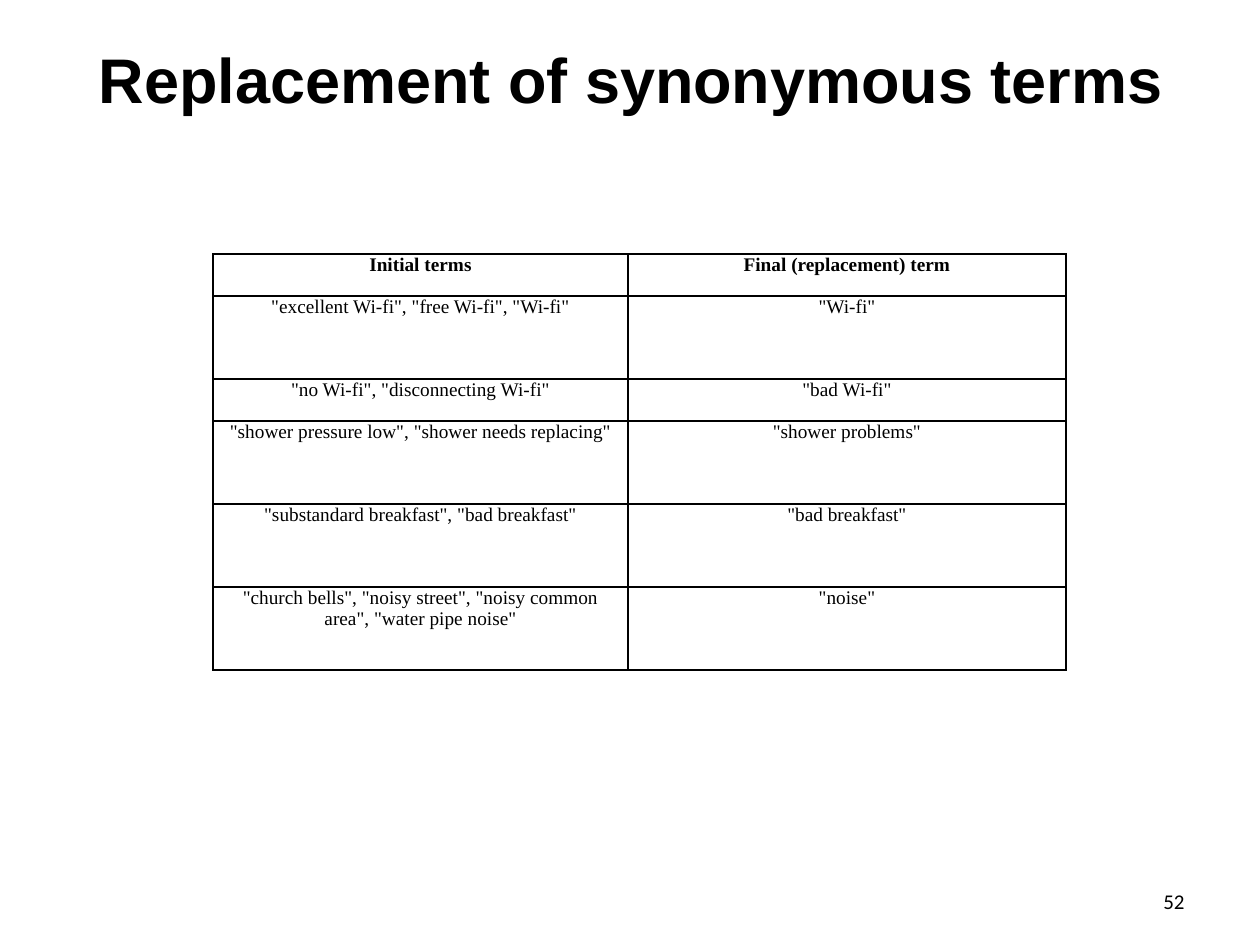
"""Build the slide on replacing synonymous terms."""
from dataclasses import dataclass

from lxml import etree
from pptx import Presentation
from pptx import util as u
from pptx.dml.color import RGBColor
from pptx.enum import text
from pptx.oxml import ns

PX_PER_INCH = 126
COLORS = {"ink": "000000", "paper": "FFFFFF"}
COL_WIDTHS = (415, 438)
SHORT, TALL = 42, 83


@dataclass(frozen=True)
class Label:
    content: str
    x: int
    y: int
    w: int
    h: int
    font: str
    size: int
    bold: bool
    align: text.PP_ALIGN


@dataclass(frozen=True)
class TermRow:
    initial: str
    final: str
    height: int
    bold: bool = False


LABELS = (
    Label("Replacement of synonymous terms", 64, 16, 1134, 125,
          "Arial", 36, True, text.PP_ALIGN.CENTER),
    Label("52", 903, 876, 294, 50, "Calibri", 12, False, text.PP_ALIGN.RIGHT),
)
ROWS = (
    TermRow("Initial terms", "Final (replacement) term", SHORT, True),
    TermRow('"excellent Wi-fi", "free Wi-fi", "Wi-fi"', '"Wi-fi"', TALL),
    TermRow('"no Wi-fi", "disconnecting Wi-fi"', '"bad Wi-fi"', SHORT),
    TermRow('"shower pressure low", "shower needs replacing"', '"shower problems"', TALL),
    TermRow('"substandard breakfast", "bad breakfast"', '"bad breakfast"', TALL),
    TermRow('"church bells", "noisy street", "noisy common area", "water pipe noise"',
            '"noise"', TALL),
)


def px(n: int) -> u.Emu:
    return u.Emu(round(n * u.Inches(1) / PX_PER_INCH))


def write(tf, content: str, font: str, size: int, bold: bool, align) -> None:
    p = tf.paragraphs[0]
    p.alignment = align
    r = p.add_run()
    r.text = content
    r.font.name, r.font.size, r.font.bold = font, u.Pt(size), bold
    r.font.color.rgb = RGBColor.from_string(COLORS["ink"])


def add_label(s, label: Label) -> None:
    sp = s.shapes.add_textbox(px(label.x), px(label.y), px(label.w), px(label.h))
    tf = sp.text_frame
    tf.word_wrap = True
    tf.vertical_anchor = text.MSO_ANCHOR.MIDDLE
    write(tf, label.content, label.font, label.size, label.bold, label.align)


def add_borders(cell) -> None:
    tc_pr = cell._tc.get_or_add_tcPr()
    for i, side in enumerate(("lnL", "lnR", "lnT", "lnB")):
        ln = etree.Element(ns.qn(f"a:{side}"), w=str(u.Pt(1)))
        fill = etree.SubElement(ln, ns.qn("a:solidFill"))
        etree.SubElement(fill, ns.qn("a:srgbClr"), val=COLORS["ink"])
        tc_pr.insert(i, ln)


def add_terms_table(s, x: int, y: int) -> None:
    height = sum(row.height for row in ROWS)
    table = s.shapes.add_table(len(ROWS), len(COL_WIDTHS), px(x), px(y),
                               px(sum(COL_WIDTHS)), px(height)).table
    table.first_row = table.horz_banding = False
    for col, width in zip(table.columns, COL_WIDTHS):
        col.width = px(width)
    for tr, row in zip(table.rows, ROWS):
        tr.height = px(row.height)
        for cell, content in zip(tr.cells, (row.initial, row.final)):
            cell.margin_left = cell.margin_right = px(9)
            cell.margin_top = cell.margin_bottom = 0
            cell.fill.background()
            add_borders(cell)
            write(cell.text_frame, content, "Times New Roman", 11, row.bold,
                  text.PP_ALIGN.CENTER)


def main() -> None:
    prs = Presentation()
    prs.slide_width, prs.slide_height = px(1260), px(945)
    s = prs.slides.add_slide(prs.slide_layouts[6])
    s.background.fill.solid()
    s.background.fill.fore_color.rgb = RGBColor.from_string(COLORS["paper"])
    for label in LABELS:
        add_label(s, label)
    add_terms_table(s, 213, 254)
    prs.save("out.pptx")


if __name__ == "__main__":
    main()
